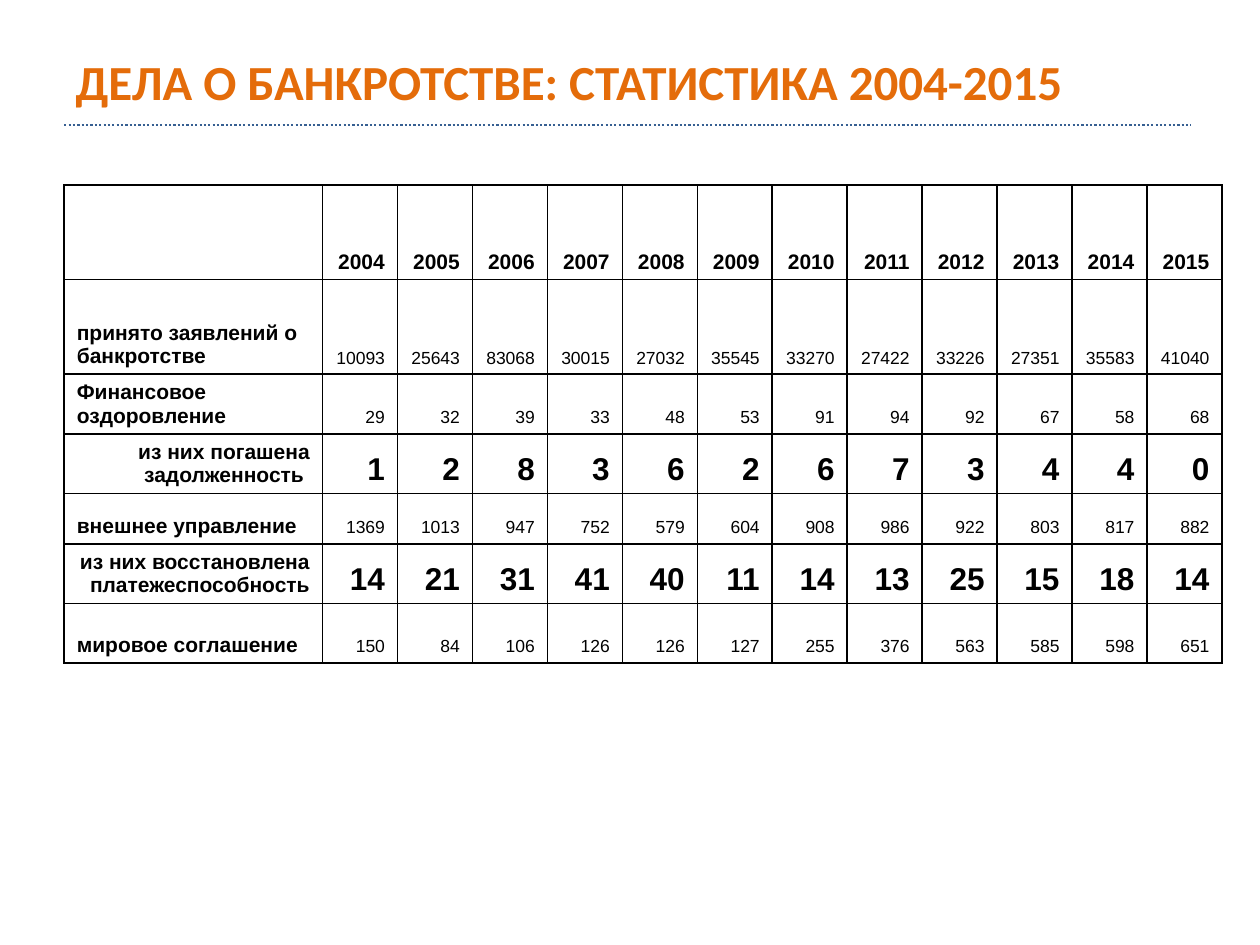
import pptx
import pptx.dml.color
import pptx.enum.dml
import pptx.enum.shapes
import pptx.enum.text
import pptx.oxml
import pptx.oxml.ns
import pptx.util
from dataclasses import dataclass

Inches, Pt = pptx.util.Inches, pptx.util.Pt
RGB = pptx.dml.color.RGBColor.from_string
ALIGN = pptx.enum.text.PP_ALIGN
ANCHOR = pptx.enum.text.MSO_ANCHOR


@dataclass
class Theme:
    title_font: str = "Calibri"
    table_font: str = "Arial"
    title_color: str = "E46C0A"
    rule_color: str = "376092"
    ink: str = "000000"
    title_size: int = 28
    label_size: int = 12
    value_size: int = 10
    outcome_size: int = 18


theme = Theme()


def set_font(p, name, size, color, bold):
    p.font.name = name
    p.font.size = Pt(size)
    p.font.color.rgb = RGB(color)
    p.font.bold = bold


def add_borders(cell, color, width):
    tcPr = cell._tc.get_or_add_tcPr()
    for side in ("lnL", "lnR", "lnT", "lnB"):
        tcPr.append(pptx.oxml.parse_xml(
            f'<a:{side} {pptx.oxml.ns.nsdecls("a")} w="{Pt(width)}">'
            f'<a:solidFill><a:srgbClr val="{color}"/></a:solidFill></a:{side}>'))


prs = pptx.Presentation()
prs.slide_width, prs.slide_height = Inches(10), Inches(7.5)
s = prs.slides.add_slide(prs.slide_layouts[5])

# Title
title = s.shapes.title
title.left, title.top = Inches(0.5), Inches(0.3)
title.width, title.height = Inches(9), Inches(0.69)
tf = title.text_frame
tf.text = "ДЕЛА О БАНКРОТСТВЕ: СТАТИСТИКА 2004-2015"
tf.word_wrap = True
tf.vertical_anchor = ANCHOR.MIDDLE
p = tf.paragraphs[0]
p.alignment = ALIGN.LEFT
set_font(p, theme.title_font, theme.title_size, theme.title_color, True)

# Dotted rule under the title
rule = s.shapes.add_connector(pptx.enum.shapes.MSO_CONNECTOR.STRAIGHT,
                              Inches(0.51), Inches(0.99), Inches(9.45), Inches(0.99))
rule.line.color.rgb = RGB(theme.rule_color)
rule.line.width = Pt(1.25)
rule.line.dash_style = pptx.enum.dml.MSO_LINE.ROUND_DOT
rule._element.spPr.append(pptx.oxml.parse_xml(
    f'<a:effectLst {pptx.oxml.ns.nsdecls("a")}/>'))

# Rows: kind, height, label, yearly values
rows = [
    ("header", 0.75, "", range(2004, 2016)),
    ("total", 0.75, "принято заявлений о банкротстве",
     [10093, 25643, 83068, 30015, 27032, 35545, 33270, 27422, 33226, 27351, 35583, 41040]),
    ("total", 0.47, "Финансовое оздоровление",
     [29, 32, 39, 33, 48, 53, 91, 94, 92, 67, 58, 68]),
    ("outcome", 0.47, "из них погашена задолженность ",
     [1, 2, 8, 3, 6, 2, 6, 7, 3, 4, 4, 0]),
    ("total", 0.4, "внешнее управление",
     [1369, 1013, 947, 752, 579, 604, 908, 986, 922, 803, 817, 882]),
    ("outcome", 0.47, "из них восстановлена платежеспособность",
     [14, 21, 31, 41, 40, 11, 14, 13, 25, 15, 18, 14]),
    ("total", 0.47, "мировое соглашение",
     [150, 84, 106, 126, 126, 127, 255, 376, 563, 585, 598, 651]),
]
value_sizes = {"header": theme.label_size, "total": theme.value_size,
               "outcome": theme.outcome_size}

# Table grid
table_width, label_width, years = 9.19, 2.05, 12
table = s.shapes.add_table(len(rows), years + 1, Inches(0.51), Inches(1.47),
                           Inches(table_width), Inches(3.8)).table
table.first_row = table.horz_banding = False
for col in table.columns:
    col.width = Inches((table_width - label_width) / years)
table.columns[0].width = Inches(label_width)

# Table cells
for i, (kind, height, label, values) in enumerate(rows):
    table.rows[i].height = Inches(height)
    for j, content in enumerate([label, *values]):
        cell = table.cell(i, j)
        add_borders(cell, theme.ink, 1)
        cell.fill.background()
        cell.vertical_anchor = ANCHOR.BOTTOM
        cell.text = str(content)
        p = cell.text_frame.paragraphs[0]
        is_label = j == 0
        p.alignment = ALIGN.LEFT if is_label and kind != "outcome" else ALIGN.RIGHT
        set_font(p, theme.table_font,
                 theme.label_size if is_label else value_sizes[kind],
                 theme.ink, is_label or kind != "total")

prs.save("out.pptx")
